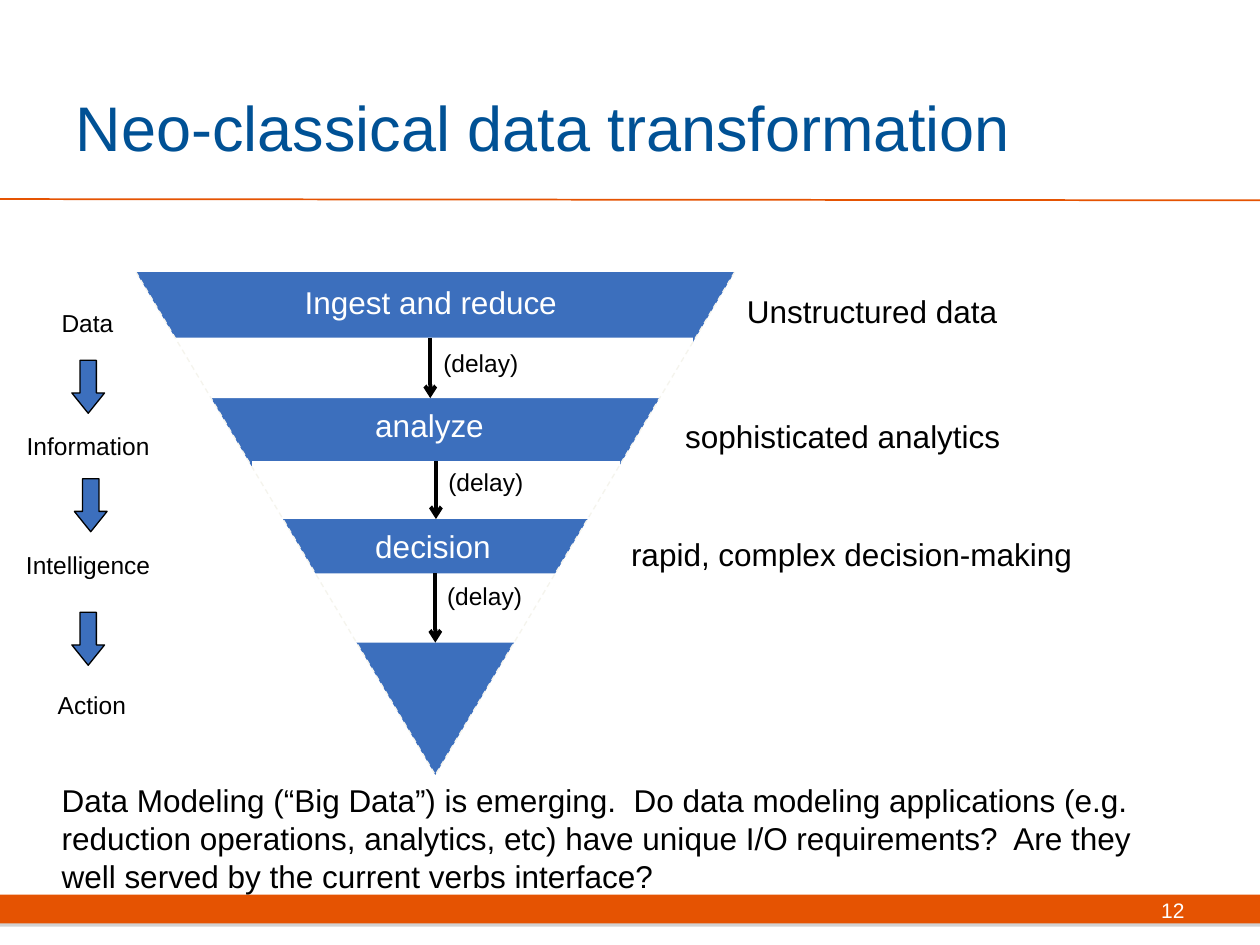
"""Build the slide with the inverted triangle of data transformation."""
from typing import Any, NamedTuple

from lxml import etree
from pptx import Presentation
from pptx import util as u
from pptx.dml.color import RGBColor
from pptx.enum import dml, shapes, text
from pptx.oxml import ns

CELL = 0.1
BLUE, ORANGE, NAVY = "3C6FBD", "E55302", "005195"
BLACK, WHITE, CREAM, GREY = "000000", "FFFFFF", "F5F4ED", "808080"
SHAPE, ANCHOR, ALIGN = shapes.MSO_SHAPE, text.MSO_ANCHOR, text.PP_ALIGN


class Box(NamedTuple):
    """Place and size in columns and rows of the slide grid."""
    column: float
    row: float
    columns: float
    rows: float


class Label(NamedTuple):
    """A text with its place and look."""
    wording: str
    box: Box
    size: float = 18
    color: str = BLACK
    align: Any = ALIGN.LEFT
    anchor: Any = ANCHOR.TOP
    spacing: float = 1.0
    wrap: bool = False
    grow: bool = True


def cells(count: float) -> int:
    """Turn grid cells into a length."""
    return u.Inches(count * CELL)


def paint(target: Any, color: str) -> None:
    """Give a fill a solid colour."""
    target.solid()
    target.fore_color.rgb = RGBColor.from_string(color)


def set_values(target: Any, values: dict[str, Any]) -> None:
    """Set every attribute named in the format values."""
    for name, value in values.items():
        setattr(target, name, value)


def write(shape: Any, label: Label) -> None:
    """Write a label into a shape."""
    frame = shape.text_frame
    growth = text.MSO_AUTO_SIZE.SHAPE_TO_FIT_TEXT if label.grow else text.MSO_AUTO_SIZE.NONE
    set_values(frame, {"text": label.wording, "word_wrap": label.wrap,
                       "auto_size": growth, "vertical_anchor": label.anchor})
    paragraph = frame.paragraphs[0]
    set_values(paragraph, {"alignment": label.align, "line_spacing": label.spacing})
    set_values(paragraph.font, {"name": "Arial", "size": u.Pt(label.size), "bold": False})
    paragraph.font.color.rgb = RGBColor.from_string(label.color)


def add_label(slide: Any, label: Label) -> None:
    """Add a text box for a label."""
    write(slide.shapes.add_textbox(*map(cells, label.box)), label)


def add_block(slide: Any, kind: Any, box: Box, fill: str, outline: str | None = None) -> Any:
    """Add a filled preset shape, outlined on request."""
    shape = slide.shapes.add_shape(kind, *map(cells, box))
    shape.shadow.inherit = False
    paint(shape.fill, fill)
    if outline:
        paint(shape.line.fill, outline)
        shape.line.width = u.Pt(0.75)
    else:
        shape.line.fill.background()
    return shape


def add_line(slide: Any, start: tuple[float, float], end: tuple[float, float],
             color: str, width: float) -> Any:
    """Add a straight connector without a shadow."""
    line = slide.shapes.add_connector(
        shapes.MSO_CONNECTOR.STRAIGHT, *map(cells, (*start, *end)))
    paint(line.line.fill, color)
    line.line.width = u.Pt(width)
    etree.SubElement(line._element.spPr, ns.qn("a:effectLst"))
    return line


def add_gap(slide: Any, box: Box) -> None:
    """Add a white band crossed by an arrow from top to bottom."""
    band = add_block(slide, SHAPE.RECTANGLE, box, WHITE)
    middle = box.column + box.columns / 2
    arrow = add_line(slide, (middle, box.row), (middle, box.row + box.rows), BLACK, 2.25)
    arrow.begin_connect(band, 0)
    arrow.end_connect(band, 2)
    etree.SubElement(arrow.line._get_or_add_ln(), ns.qn("a:tailEnd"), type="arrow")


def add_step_arrow(slide: Any, box: Box) -> None:
    """Add a block arrow turned to point down."""
    arrow = add_block(slide, SHAPE.RIGHT_ARROW, box, BLUE, BLACK)
    arrow.rotation = 90
    arrow.adjustments[0], arrow.adjustments[1] = 0.5, 0.62


def add_footer(slide: Any) -> None:
    """Add the footer bar with its shadow and the slide number."""
    bar = add_block(slide, SHAPE.RECTANGLE, Box(0, 71, 100, 2.3), ORANGE)
    effects = bar._element.spPr.find(ns.qn("a:effectLst"))
    shadow = etree.SubElement(effects, ns.qn("a:outerShdw"), dist=str(u.Pt(1.8)),
                              dir="5400000", rotWithShape="0")
    color = etree.SubElement(shadow, ns.qn("a:srgbClr"), val=GREY)
    etree.SubElement(color, ns.qn("a:alpha"), val="35000")
    add_label(slide, Label("12", Box(71.7, 70.2, 23.3, 4), 12, WHITE, ALIGN.RIGHT,
                           ANCHOR.MIDDLE, wrap=True, grow=False))


def add_title(slide: Any) -> None:
    """Place and format the title."""
    box = Box(5, 2.5, 81.7, 15)
    title = slide.shapes.title
    set_values(title, dict(zip(("left", "top", "width", "height"), map(cells, box))))
    write(title, Label("Neo-classical data transformation", box, 36, NAVY,
                       anchor=ANCHOR.MIDDLE, wrap=True, grow=False))


def add_funnel(slide: Any) -> None:
    """Add the triangle, its dashed sides and the gaps between stages."""
    funnel = Box(10.8, 21.6, 47.5, 39.9)
    triangle = add_block(slide, SHAPE.ISOSCELES_TRIANGLE, funnel, BLUE)
    triangle._element.spPr.xfrm.set("flipV", "1")
    gaps = (Box(13.3, 26.8, 41.7, 4.8), Box(20, 36.6, 29.2, 4.6), Box(24.7, 45.5, 19.7, 5.5))
    for gap in gaps:
        add_gap(slide, gap)
    tip = (funnel.column + funnel.columns / 2, funnel.row + funnel.rows)
    for column in (funnel.column, funnel.column + funnel.columns):
        side = add_line(slide, (column, funnel.row), tip, CREAM, 0.75)
        side.line.dash_style = dml.MSO_LINE.DASH


def main() -> None:
    """Build and save the presentation."""
    presentation = Presentation()
    set_values(presentation, {"slide_width": u.Inches(10), "slide_height": u.Inches(7.5)})
    slide = presentation.slides.add_slide(presentation.slide_layouts[5])
    add_title(slide)
    add_footer(slide)
    add_line(slide, (0, 15.8), (100, 15.9), ORANGE, 1)
    add_funnel(slide)

    for column, row in ((4.9, 29.4), (5.1, 38.8), (4.9, 49.4)):
        add_step_arrow(slide, Box(column, row, 4.2, 2.6))

    steps = (
        ("Data", Box(3.9, 21.7, 6.3, 4.3), ALIGN.LEFT, ANCHOR.MIDDLE),
        ("Information", Box(1.6, 32.7, 10.8, 4.3), ALIGN.CENTER, ANCHOR.BOTTOM),
        ("Intelligence", Box(1.1, 40.9, 11.8, 4.3), ALIGN.CENTER, ANCHOR.MIDDLE),
        ("Action", Box(3.6, 52, 6.8, 4.3), ALIGN.LEFT, ANCHOR.MIDDLE),
    )
    for wording, box, align, anchor in steps:
        add_label(slide, Label(wording, box, 14, BLACK, align, anchor, 2.5, grow=False))

    for column, row in ((34.2, 27.1), (34.6, 36.6), (34.5, 45.6)):
        add_label(slide, Label("(delay)", Box(column, row, 8, 2.7), 14))

    captions = (
        Label("Ingest and reduce", Box(23.2, 22, 22.2, 4), color=WHITE),
        Label("analyze", Box(28.8, 31.7, 10.7, 4), color=WHITE),
        Label("decision", Box(28.8, 41.3, 11.3, 4), color=WHITE),
        Label("Unstructured data", Box(58.3, 22.7, 22.1, 4)),
        Label("sophisticated analytics", Box(53.4, 32.6, 27.3, 4)),
        Label("rapid, complex decision-making", Box(49.1, 42, 38.1, 4)),
        Label("Data Modeling (“Big Data”) is emerging.  Do data modeling applications "
              "(e.g. reduction operations, analytics, etc) have unique I/O requirements?  "
              "Are they well served by the current verbs interface?",
              Box(3.9, 61.5, 91.5, 10.1), wrap=True),
    )
    for caption in captions:
        add_label(slide, caption)
    presentation.save("out.pptx")


if __name__ == "__main__":
    main()
